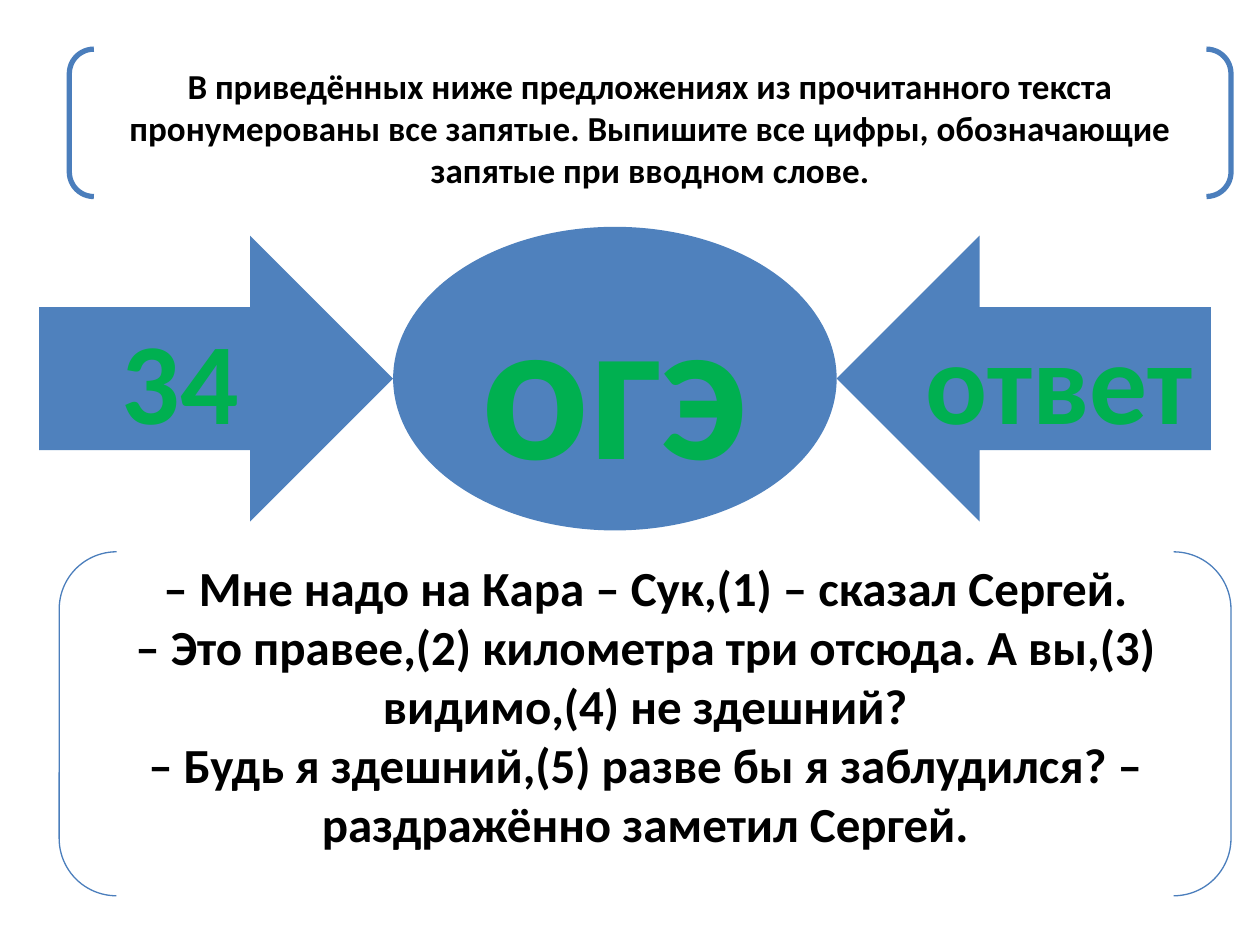
from pptx import Presentation
from pptx.dml.color import RGBColor
from pptx.enum.shapes import MSO_SHAPE as SHAPE
from pptx.enum.text import MSO_ANCHOR as ANCHOR, PP_ALIGN as ALIGN
from pptx.util import Inches, Pt

BLUE = RGBColor(0x4F, 0x81, 0xBD)
LINE_BLUE = RGBColor(0x4B, 0x7E, 0xBC)
GREEN = RGBColor(0x00, 0xB0, 0x50)
BLACK = RGBColor(0, 0, 0)

TASK = ("В приведённых ниже предложениях из прочитанного текста пронумерованы "
        "все запятые. Выпишите все цифры, обозначающие запятые при вводном слове.")
DIALOGUE = (
    "– Мне надо на Кара – Сук,(1) – сказал Сергей.",
    "– Это правее,(2) километра три отсюда. А вы,(3) видимо,(4) не здешний?",
    "– Будь я здешний,(5) разве бы я заблудился? – раздражённо заметил Сергей.",
)


def write(sp, lines, size, color, top=0.05, bottom=0.05):
    tf = sp.text_frame
    tf.word_wrap = True
    tf.vertical_anchor = ANCHOR.MIDDLE
    tf.margin_top, tf.margin_bottom = Inches(top), Inches(bottom)
    for i, line in enumerate(lines):
        p = tf.add_paragraph() if i else tf.paragraphs[0]
        p.alignment = ALIGN.CENTER
        r = p.add_run()
        r.text = line
        r.font.name, r.font.size, r.font.bold = "Calibri", Pt(size), True
        r.font.color.rgb = color


def add_preset(slide, kind, box):
    sp = slide.shapes.add_shape(kind, *(Inches(v) for v in box))
    sp.shadow.inherit = False
    return sp


def bracketed_text(slide, box, lines, size, weight, **insets):
    sp = add_preset(slide, SHAPE.DOUBLE_BRACKET, box)
    sp.fill.background()
    sp.line.color.rgb = LINE_BLUE
    sp.line.width = Pt(weight)
    write(sp, lines, size, BLACK, **insets)


def answer_row(slide, box, widths):
    """Two arrows that meet the sides of a slightly taller ellipse."""
    left, top, height = box
    overhang = 0.07
    parts = ((SHAPE.RIGHT_ARROW, "34", 66, 0),
             (SHAPE.OVAL, "огэ", 115, overhang),
             (SHAPE.LEFT_ARROW, "ответ", 66, 0))
    for (kind, text, size, extra), width in zip(parts, widths):
        sp = add_preset(slide, kind, (left, top - extra, width, height + 2 * extra))
        sp.fill.solid()
        sp.fill.fore_color.rgb = BLUE
        sp.line.fill.background()
        write(sp, [text], size, GREEN)
        left += width


def main():
    prs = Presentation()
    prs.slide_width, prs.slide_height = Inches(10), Inches(7.5)
    slide = prs.slides.add_slide(prs.slide_layouts[6])
    bracketed_text(slide, (0.55, 0.39, 9.22, 1.17), [TASK], 20, 3, top=0.12)
    bracketed_text(slide, (0.47, 4.38, 9.3, 2.73), DIALOGUE, 28, 0.75, bottom=0.35)
    answer_row(slide, (0.31, 1.87, 2.27), (2.81, 3.52, 2.97))
    prs.save("out.pptx")


if __name__ == "__main__":
    main()
